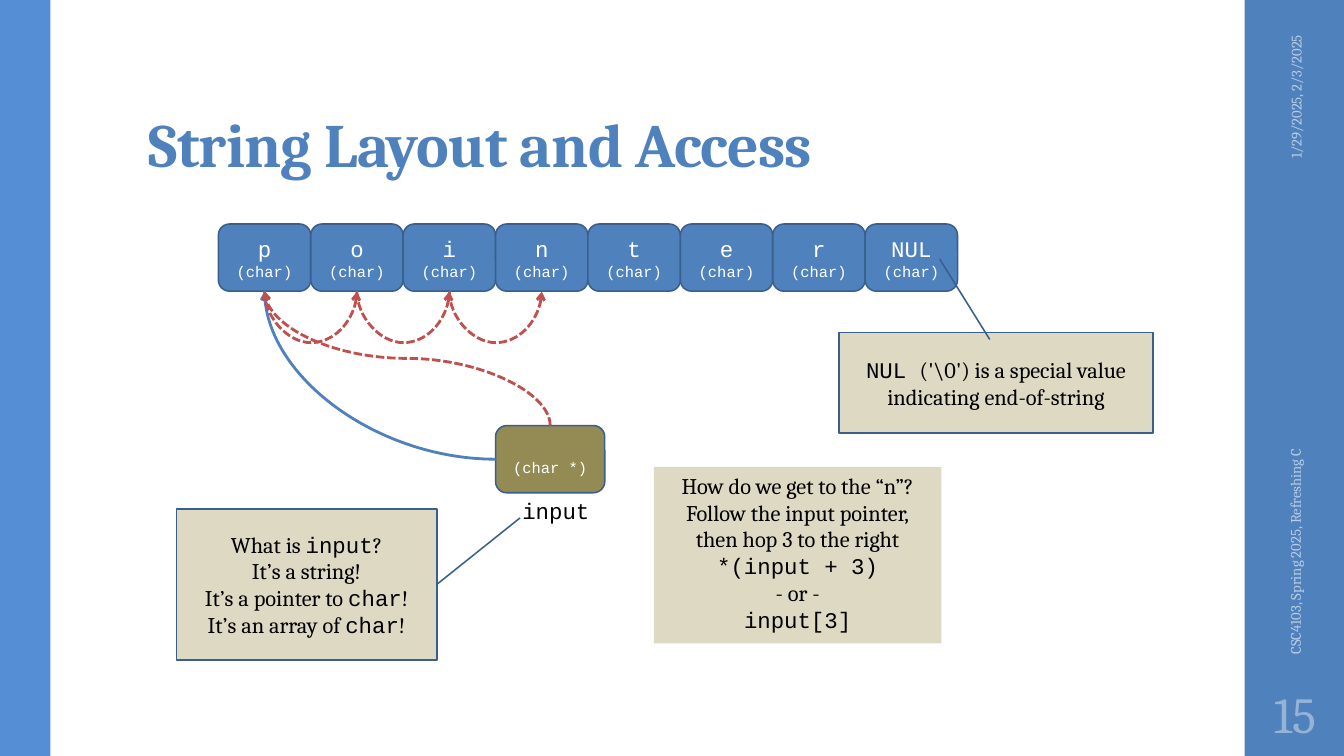
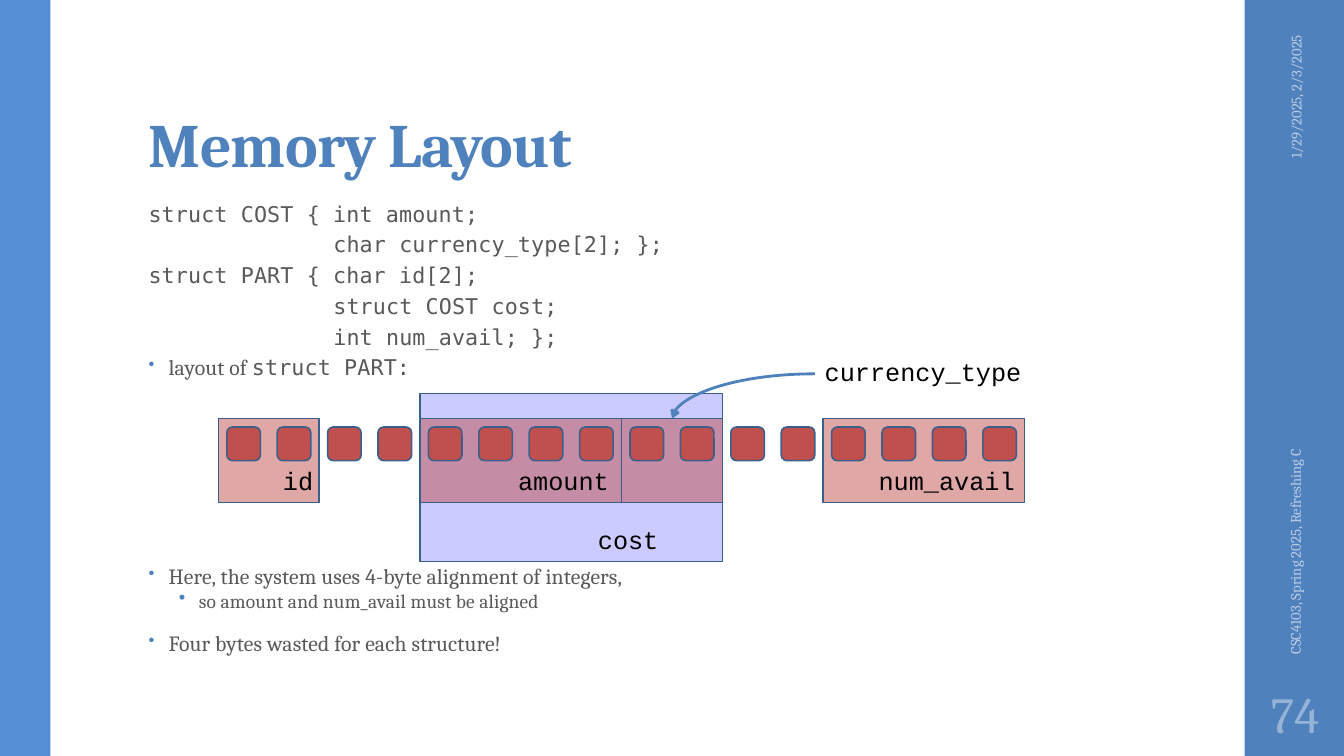
from dataclasses import dataclass

from lxml.etree import SubElement
from pptx import Presentation
from pptx.dml.color import RGBColor
from pptx.enum.dml import MSO_LINE_DASH_STYLE as Dash
from pptx.enum.shapes import MSO_CONNECTOR as Connector, MSO_SHAPE as Shape
from pptx.enum.text import MSO_ANCHOR as Anchor, MSO_AUTO_SIZE as AutoSize, PP_ALIGN as Align
from pptx.oxml.ns import qn
from pptx.util import Pt


# Theme: colours, fonts and type sizes
@dataclass(frozen=True)
class Theme:
    blue: str = "4F81BD"
    light_blue: str = "558ED5"
    outline: str = "3A5F8C"
    olive: str = "948A54"
    sand: str = "DDD9C3"
    red: str = "C0504D"
    lilac: str = "9999FF"
    white: str = "FFFFFF"
    black: str = "000000"
    grey: str = "595959"
    footer: str = "B9CDE5"
    number: str = "95B3D7"
    serif: str = "Cambria"
    code: str = "Courier New"
    listing: str = "DejaVu Sans Mono"
    title_size: float = 44
    number_size: float = 36
    label_size: float = 18
    text_size: float = 16
    body_size: float = 15.5
    detail_size: float = 13.9
    type_size: float = 11
    footer_size: float = 10.5


THEME = Theme()


@dataclass(frozen=True)
class Box:
    left: float
    top: float
    width: float
    height: float

    def lengths(self) -> tuple:
        return Pt(self.left), Pt(self.top), Pt(self.width), Pt(self.height)


@dataclass(frozen=True)
class TextStyle:
    size: float
    color: str = THEME.black
    align: Align = Align.LEFT
    code_font: str = THEME.code
    bold: bool = False


@dataclass(frozen=True)
class Curve:
    box: Box
    color: str
    rotation: int
    flip: str = ""
    preset: str = "curvedConnector3"
    bend: int = 50000
    dashed: bool = False


@dataclass(frozen=True)
class Callout:
    box: Box
    lines: tuple
    pointer: tuple


@dataclass(frozen=True)
class Field:
    name: str
    first_byte: int
    size: int


@dataclass(frozen=True)
class BodyLine:
    text: str
    indent: float
    before: float = 6
    after: float = 2
    spacing: float = 0.75
    size: float = THEME.body_size
    bullet_percent: int = 0


TITLE_BOX = Box(99, 23, 763, 110)
FRAME_CENTRED = {"vertical_anchor": Anchor.MIDDLE, "word_wrap": True}
FRAME_TIGHT = {"word_wrap": False}
NOTE = TextStyle(THEME.text_size, align=Align.CENTER)
LABEL = TextStyle(THEME.label_size)
CELL_TYPE = TextStyle(THEME.type_size, THEME.white, Align.CENTER)


# Shared helpers
def set_formats(target, formats: dict) -> None:
    for name, value in formats.items():
        setattr(target, name, value)


def write_line(paragraph, text: str, style: TextStyle) -> None:
    """Write one paragraph; parts between backticks take the code font."""
    paragraph.alignment = style.align
    for index, part in enumerate(text.split("`")):
        if part:
            run = paragraph.add_run()
            run.text = part
            font_name = style.code_font if index % 2 else THEME.serif
            set_formats(run.font, {"name": font_name, "size": Pt(style.size), "bold": style.bold})
            run.font.color.rgb = RGBColor.from_string(style.color)


def write_lines(shape, lines: tuple, style: TextStyle, frame: dict) -> None:
    text_frame = shape.text_frame
    set_formats(text_frame, frame)
    for index, text in enumerate(lines):
        paragraph = text_frame.add_paragraph() if index else text_frame.paragraphs[0]
        write_line(paragraph, text, style)


def set_tracking(shape, hundredths: int) -> None:
    for properties in shape.element.iter(qn("a:rPr")):
        properties.set("spc", str(hundredths))


def add_block(slide, kind: Shape, box: Box, color: str, outlined: bool = True, opacity: int = 100):
    shape = slide.shapes.add_shape(kind, *box.lengths())
    shape.shadow.inherit = False
    shape.fill.solid()
    shape.fill.fore_color.rgb = RGBColor.from_string(color)
    if outlined:
        shape.line.color.rgb = RGBColor.from_string(THEME.outline)
        shape.line.width = Pt(1.1)
    else:
        shape.line.fill.background()
    if opacity < 100:
        fill_color = next(shape.element.iter(qn("a:srgbClr")))
        SubElement(fill_color, qn("a:alpha"), val=str(opacity * 1000))
    return shape


def add_text(slide, box: Box, lines: tuple, style: TextStyle, frame: dict, rotation: float = 0):
    shape = slide.shapes.add_textbox(*box.lengths())
    shape.rotation = rotation
    write_lines(shape, lines, style, frame)
    return shape


def add_callout(slide, callout: Callout) -> None:
    shape = add_block(slide, Shape.LINE_CALLOUT_1, callout.box, THEME.sand)
    for index, value in enumerate(callout.pointer):
        shape.adjustments[index] = value
    write_lines(shape, callout.lines, NOTE, FRAME_CENTRED)


def add_curve(slide, curve: Curve) -> None:
    box = curve.box
    width, height = box.width, box.height
    if curve.rotation % 180:  # a quarter turn swaps the sides about the centre
        width, height = height, width
    left = box.left + (box.width - width) / 2
    top = box.top + (box.height - height) / 2
    connector = slide.shapes.add_connector(
        Connector.CURVE, Pt(left), Pt(top), Pt(left + width), Pt(top + height))
    connector.line.color.rgb = RGBColor.from_string(curve.color)
    connector.line.width = Pt(2)
    if curve.dashed:
        connector.line.dash_style = Dash.SQUARE_DOT
    properties = connector.element.spPr
    transform = properties.find(qn("a:xfrm"))
    transform.set("rot", str(curve.rotation * 60000))
    if curve.flip:
        transform.set(curve.flip, "1")
    geometry = properties.find(qn("a:prstGeom"))
    geometry.set("prst", curve.preset)
    if curve.bend != 50000:
        guides = geometry.find(qn("a:avLst"))
        SubElement(guides, qn("a:gd"), name="adj1", fmla=f"val {curve.bend}")
    SubElement(properties.find(qn("a:ln")), qn("a:tailEnd"), type="arrow")
    SubElement(properties, qn("a:effectLst"))


def add_bands(layout, slide) -> None:
    """Build the side bands and hand them to the layout."""
    for box, color in ((Box(889, 0, 71, 540), THEME.blue), (Box(0, 0, 36, 540), THEME.light_blue)):
        band = add_block(slide, Shape.RECTANGLE, box, color, outlined=False)
        layout.shapes.element.append(band.element)


def add_titled_slide(presentation, title: str, number: int):
    layout = presentation.slide_layouts[5]
    slide = presentation.slides.add_slide(layout)
    if len(presentation.slides) == 1:
        add_bands(layout, slide)
    # Title
    shape = slide.shapes.title
    set_formats(shape, dict(zip(("left", "top", "width", "height"), TITLE_BOX.lengths())))
    write_lines(shape, (title,), TextStyle(THEME.title_size, THEME.blue, bold=True), {
        "vertical_anchor": Anchor.BOTTOM, "word_wrap": True, "auto_size": AutoSize.NONE,
        "margin_left": Pt(7.2), "margin_right": Pt(7.2),
        "margin_top": Pt(2.2), "margin_bottom": Pt(3.6)})
    shape.text_frame.paragraphs[0].line_spacing = 0.9
    set_tracking(shape, -50)
    # Date, course and number on the right band
    add_text(slide, Box(850.5, 78.5, 150, 29), ("1/29/2025, 2/3/2025",),
             TextStyle(THEME.footer_size, THEME.footer, Align.RIGHT), FRAME_CENTRED, 270)
    add_text(slide, Box(784, 319, 282, 29), ("CSC4103, Spring 2025, Refreshing C",),
             TextStyle(THEME.footer_size, THEME.footer), FRAME_CENTRED, 270)
    margins = {f"margin_{side}": Pt(3.6) for side in ("left", "right", "top", "bottom")}
    add_text(slide, Box(889, 486, 72, 47), (str(number),),
             TextStyle(THEME.number_size, THEME.number, Align.CENTER), FRAME_CENTRED | margins)
    return slide


# Slide: string layout
def build_string_slide(presentation) -> None:
    slide = add_titled_slide(presentation, "String Layout and Access", 15)
    left, top, pitch, height = 156, 160, 66, 48
    bottom, first_middle = top + height, left + pitch / 2

    # Characters of the string
    for index, letter in enumerate((*"pointer", "NUL")):
        cell = add_block(slide, Shape.ROUNDED_RECTANGLE,
                         Box(left + index * pitch, top, pitch, height), THEME.blue)
        write_lines(cell, (f"`{letter}`", "`(char)`"), CELL_TYPE, FRAME_CENTRED)
        cell.text_frame.paragraphs[0].runs[0].font.size = Pt(THEME.text_size)

    # Pointer variable
    pointer = Box(354, 304, 78, height)
    cell = add_block(slide, Shape.ROUNDED_RECTANGLE, pointer, THEME.olive)
    write_lines(cell, ("`(char *)`",), CELL_TYPE,
                {"vertical_anchor": Anchor.BOTTOM, "margin_bottom": Pt(9)})
    add_text(slide, Box(366, 351.5, 63, 27), ("`input`",), TextStyle(THEME.text_size), FRAME_TIGHT)

    # Pointer arrows and hops
    pointer_middle = pointer.left + pointer.width / 2
    add_curve(slide, Curve(
        Box(first_middle, bottom, pointer.left - first_middle, pointer.top + height / 2 - bottom),
        THEME.blue, 180, preset="curvedConnector2"))
    add_curve(slide, Curve(
        Box(first_middle, bottom, pointer_middle - first_middle, pointer.top - bottom),
        THEME.red, 270, "flipV", dashed=True))
    for hop in range(3):
        add_curve(slide, Curve(Box(first_middle + hop * pitch, bottom, pitch, 0.25),
                               THEME.red, 270, "flipH", bend=14400000, dashed=True))

    # Notes
    add_callout(slide, Callout(
        Box(126, 363.5, 186, 108),
        ("What is `input`?", "It’s a string!", "It’s a pointer to `char`!", "It’s an array of `char`!"),
        (0.5, 1, 0.06, 1.32)))
    add_callout(slide, Callout(
        Box(599.5, 237.5, 224, 72),
        (r"`NUL `('\0') is a special value", "indicating end-of-string"),
        (0.07, 0.48, -0.73, 0.32)))
    answer = add_text(
        slide, Box(467, 333.5, 205.5, 126),
        ("How do we get to the “n”?", "Follow the input pointer,", "then hop 3 to the right",
         "`*(input + 3)`", "- or -", "`input[3]`"), NOTE, FRAME_TIGHT)
    answer.fill.solid()
    answer.fill.fore_color.rgb = RGBColor.from_string(THEME.sand)


# Slide: memory layout
def add_body(slide, lines: tuple) -> None:
    shape = slide.shapes.add_textbox(*Box(99, 144, 677, 343).lengths())
    shape.text_frame.word_wrap = True
    for index, line in enumerate(lines):
        paragraph = shape.text_frame.add_paragraph() if index else shape.text_frame.paragraphs[0]
        write_line(paragraph, line.text, TextStyle(line.size, THEME.grey, code_font=THEME.listing))
        set_formats(paragraph, {"line_spacing": line.spacing, "space_before": Pt(line.before),
                                "space_after": Pt(line.after)})
        properties = paragraph._p.get_or_add_pPr()
        properties.set("marL", str(Pt(line.indent)))
        if line.bullet_percent:
            properties.set("indent", str(-Pt(14.4)))
            color = SubElement(properties, qn("a:buClr"))
            SubElement(color, qn("a:srgbClr"), val=THEME.blue)
            SubElement(properties, qn("a:buSzPct"), val=str(line.bullet_percent * 1000))
            SubElement(properties, qn("a:buChar"), char="•")
    set_tracking(shape, 10)


def build_memory_slide(presentation) -> None:
    slide = add_titled_slide(presentation, "Memory Layout", 74)
    member_indent = 132
    add_body(slide, (
        BodyLine("`struct COST { int amount;`", 0),
        BodyLine("`char currency_type[2]; };`", member_indent),
        BodyLine("`struct PART { char id[2];`", 0),
        BodyLine("`struct COST cost;`", member_indent),
        BodyLine("`int num_avail; };`", member_indent),
        BodyLine("layout of `struct PART:`", 14.4, bullet_percent=80),
        BodyLine("Here, the system uses 4-byte alignment of integers,", 14.4, 133, bullet_percent=80),
        BodyLine("so amount and num_avail must be aligned", 36, 3, 3, 0.7, THEME.detail_size, 100),
        BodyLine("Four bytes wasted for each structure!", 14.4, 14, bullet_percent=80)))

    # Structure members over a row of bytes
    left, top, pitch, byte_size = 156, 299, 36, 24
    inset = (pitch - byte_size) / 2
    fields = (Field("num_avail", 12, 4), Field("currency_type", 8, 2),
              Field("amount", 4, 4), Field("id", 0, 2))
    add_block(slide, Shape.RECTANGLE, Box(left + 4 * pitch, 281, 6 * pitch, 120),
              THEME.lilac, opacity=50)
    for field in fields:
        box = Box(left + field.first_byte * pitch, top, field.size * pitch, 60)
        add_block(slide, Shape.RECTANGLE, box, THEME.red, opacity=50)
    for index in range(16):
        box = Box(left + index * pitch + inset, top + inset, byte_size, byte_size)
        add_block(slide, Shape.ROUNDED_RECTANGLE, box, THEME.red)

    # Member names
    for name, box in (("id", Box(195, 329, 37, 29)), ("amount", Box(363, 329, 81, 29)),
                      ("num_avail", Box(620.5, 329, 113, 29)), ("cost", Box(420, 371, 58, 29)),
                      ("currency_type", Box(582, 251, 157, 29))):
        add_text(slide, box, (f"`{name}`",), LABEL, FRAME_TIGHT)
    add_curve(slide, Curve(Box(480, 267, 102, 32), THEME.blue, 180, "flipV", "curvedConnector2"))


def main() -> None:
    presentation = Presentation()
    set_formats(presentation, {"slide_width": Pt(960), "slide_height": Pt(540)})
    build_string_slide(presentation)
    build_memory_slide(presentation)
    presentation.save("out.pptx")


if __name__ == "__main__":
    main()
